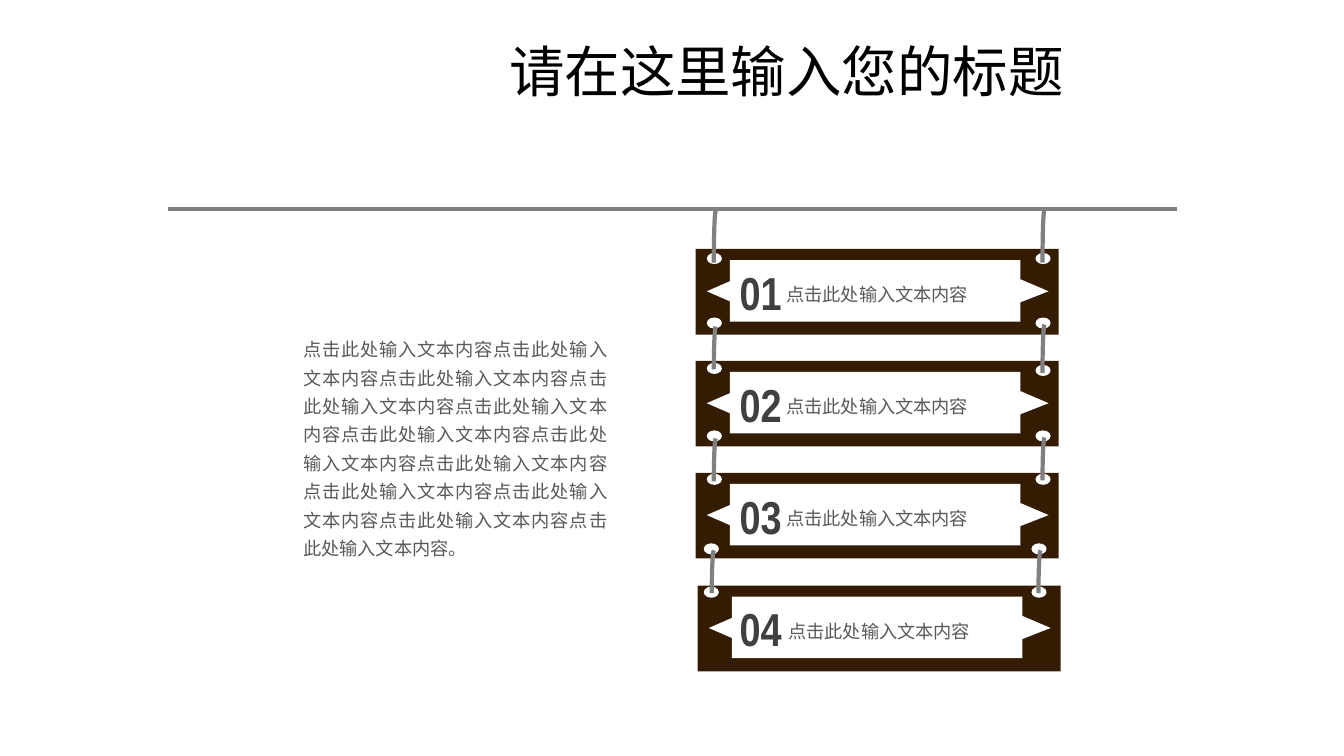
from lxml.etree import SubElement
from pptx import Presentation
from pptx.dml.color import RGBColor
from pptx.enum.shapes import MSO_CONNECTOR, MSO_SHAPE
from pptx.enum.text import MSO_ANCHOR, MSO_AUTO_SIZE, PP_ALIGN
from pptx.oxml.ns import qn
from pptx.util import Emu, Pt

SCALE = 9144  # 100 px to the inch

BROWN = RGBColor(0x34, 0x1C, 0x03)
WHITE = RGBColor(0xFF, 0xFF, 0xFF)
BLACK = RGBColor(0x00, 0x00, 0x00)
GREY = RGBColor(0x80, 0x80, 0x80)
DARK = RGBColor(0x40, 0x40, 0x40)
SOFT = RGBColor(0x59, 0x59, 0x59)

SANS = "Noto Sans CJK SC"
PHRASE = "点击此处输入文本内容"
BODY = dict(font=SANS, size=13, color=SOFT, align=PP_ALIGN.JUSTIFY, space=1.3)

# Each sign: left, top, holes (x, y), ropes (x, y, height)
SIGNS = [
    (690, 247, [(701, 251), (701, 315), (1027, 251), (1027, 315)],
     [(708, 209, 103), (1034, 207, 107)]),
    (690, 358, [(701, 360), (701, 427), (1027, 362), (1027, 427)],
     [(708, 324, 85), (1034, 322, 96)]),
    (690, 469, [(701, 470), (698, 539), (1027, 470), (1023, 539)],
     [(708, 435, 85), (1034, 434, 85)]),
    (692, 581, [(698, 582), (1023, 582)],
     [(706, 546, 85), (1030, 546, 85)]),
]

# Label outline, measured from the corner of its sign
LABEL = [(34, 11), (322, 11), (322, 30), (350, 42), (322, 53),
         (322, 72), (34, 72), (34, 52), (11, 42), (34, 32)]


def px(*nums):
    return [Emu(num * SCALE) for num in nums]


def write(shape, text, font, size, color, align=PP_ALIGN.LEFT, space=None,
          bold=False, inset=(10, 5, 10, 5)):
    frame = shape.text_frame
    frame.word_wrap = True
    frame.auto_size = MSO_AUTO_SIZE.NONE
    frame.vertical_anchor = MSO_ANCHOR.MIDDLE
    (frame.margin_left, frame.margin_top,
     frame.margin_right, frame.margin_bottom) = px(*inset)
    para = frame.paragraphs[0]
    para.alignment = align
    para.line_spacing = space
    run = para.add_run()
    run.text = text
    run.font.name = font
    run.font.size = Pt(size)
    run.font.bold = bold
    run.font.color.rgb = color
    if font == SANS:
        SubElement(run.font._element, qn("a:ea")).set("typeface", font)


def paint(shape, color):
    shape.shadow.inherit = False
    shape.fill.solid()
    shape.fill.fore_color.rgb = color
    shape.line.fill.background()


def add_solid(shapes, kind, box, color):
    paint(shapes.add_shape(kind, *px(*box)), color)


def add_label(shapes, left, top):
    points = [(left + x, top + y) for x, y in LABEL]
    pen = shapes.build_freeform(*points[0], scale=SCALE)
    pen.add_line_segments(points[1:])
    label = pen.convert_to_shape()
    paint(label, WHITE)
    write(label, PHRASE, inset=(79, 5, 39, 5), **BODY)


def add_rope(shapes, left, top, height):
    rope = shapes.add_shape(MSO_SHAPE.ARC, *px(left, top, 4, height))
    rope.shadow.inherit = False
    rope.fill.background()
    rope.line.color.rgb = GREY
    rope.line.width = Pt(3)
    rope.element.spPr.xfrm.set("flipH", "1")


def add_sign(slide, num, left, top, holes, ropes):
    shapes = slide.shapes.add_group_shape().shapes
    add_solid(shapes, MSO_SHAPE.RECTANGLE, (left, top, 360, 85), BROWN)
    add_label(shapes, left, top)
    for x, y in holes:
        add_solid(shapes, MSO_SHAPE.OVAL, (x, y, 15, 11), WHITE)
    for rope in ropes:
        add_rope(shapes, *rope)
    box = shapes.add_textbox(*px(726, top + 15, 57, 55))
    write(box, f"{num:02}", "Arial Narrow", 33, DARK, align=PP_ALIGN.CENTER,
          bold=True, inset=(0, 0, 0, 0))


def add_rail(slide):
    rail = slide.shapes.add_connector(
        MSO_CONNECTOR.STRAIGHT, *px(167, 207, 1167, 207))
    rail.line.color.rgb = GREY
    rail.line.width = Pt(3)
    SubElement(rail.element.spPr, qn("a:effectLst"))


def main():
    deck = Presentation()
    deck.slide_width, deck.slide_height = px(1333, 750)
    slide = deck.slides.add_slide(deck.slide_layouts[5])

    # Title
    title = slide.shapes.title
    title.left, title.top, title.width, title.height = px(495, 41, 857, 66)
    write(title, "请在这里输入您的标题", "Calibri", 39.6, BLACK, space=0.9)

    # Hanging signs
    for num, sign in enumerate(SIGNS, 1):
        add_sign(slide, num, *sign)

    # Body text and the rail above
    body = slide.shapes.add_textbox(*px(291, 238, 321, 408))
    write(body, PHRASE * 12 + "。", **BODY)
    add_rail(slide)

    deck.save("out.pptx")


if __name__ == "__main__":
    main()
